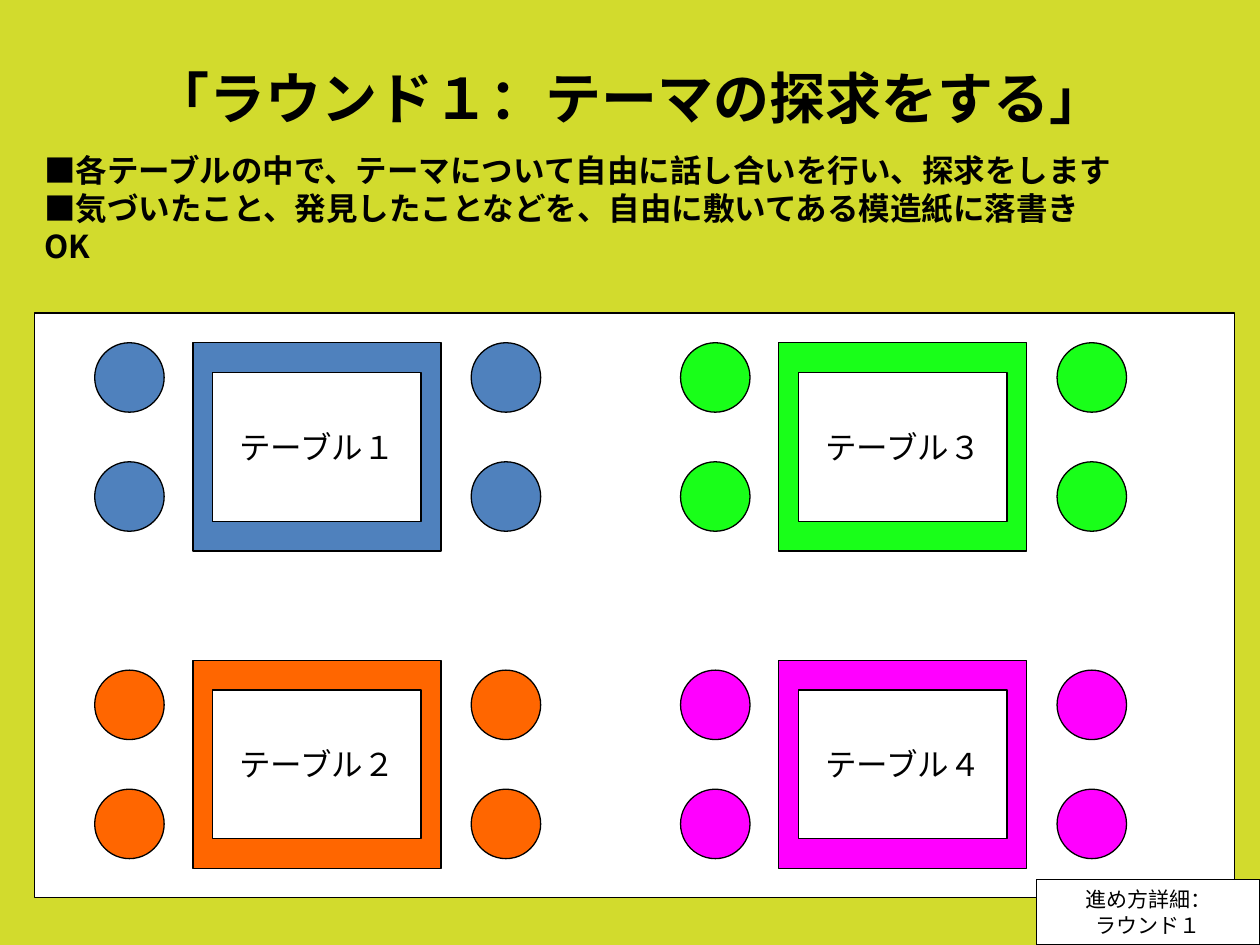
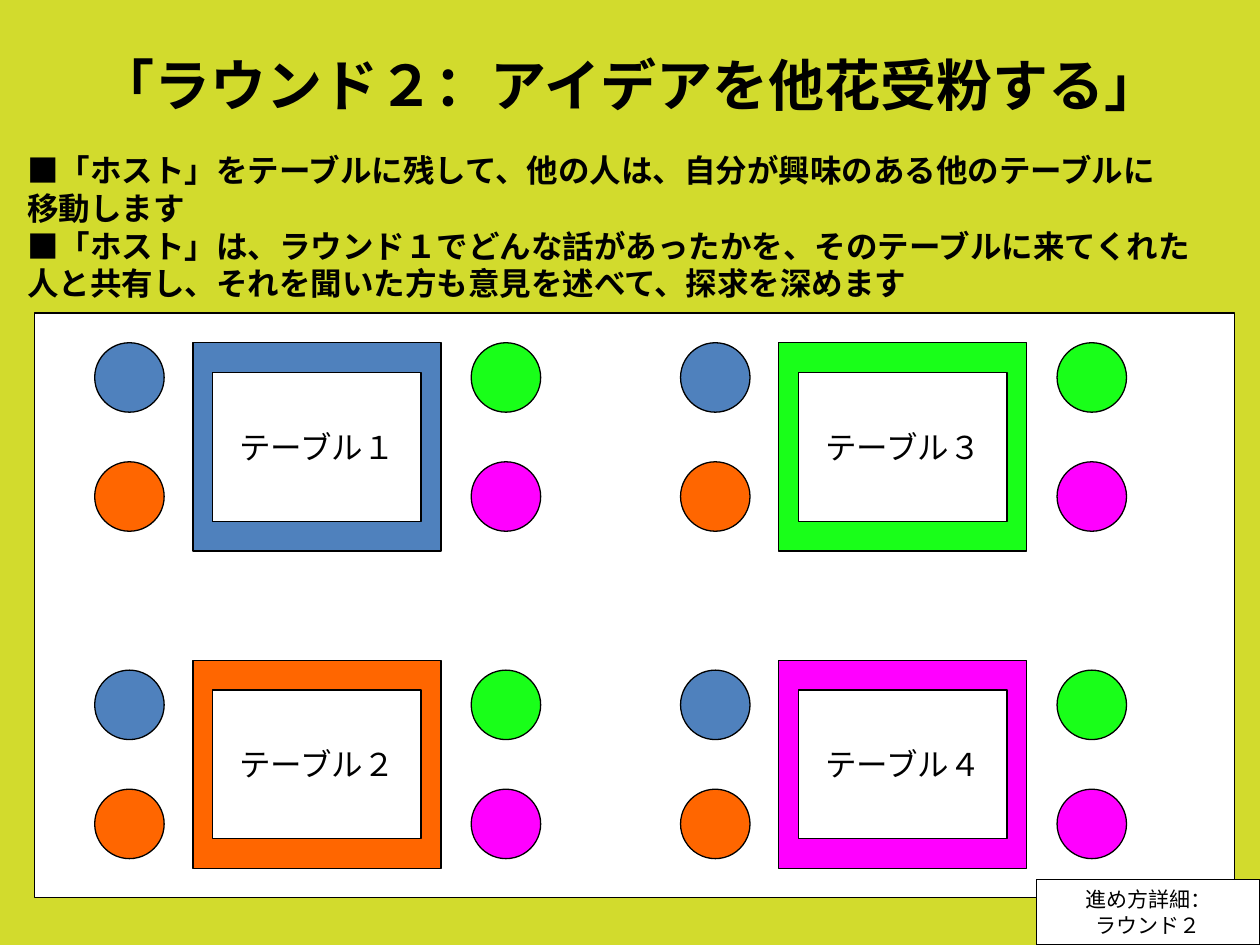
from lxml import etree
from pptx import Presentation
from pptx.dml.color import RGBColor
from pptx.enum.shapes import MSO_SHAPE
from pptx.enum.text import MSO_ANCHOR, PP_ALIGN
from pptx.oxml.ns import qn
from pptx.util import Cm, Pt

RECTANGLE, OVAL = MSO_SHAPE.RECTANGLE, MSO_SHAPE.OVAL
TOP, MIDDLE = MSO_ANCHOR.TOP, MSO_ANCHOR.MIDDLE
LEFT, CENTER = PP_ALIGN.LEFT, PP_ALIGN.CENTER

JAPANESE = "Noto Sans CJK JP"
LIME, WHITE, BLACK, GREEN = "D2DB2D", "FFFFFF", "000000", "00FF00"
TABLE_COLORS = ["4F81BD", "FF6600", GREEN, "FF00FF"]
DIGITS = "１２３４"

TITLE_FORMAT = {"name": JAPANESE, "size": Pt(32), "bold": True}
TABLE_FORMAT = {"name": "Arial", "size": Pt(18)}
FOOTER_FORMAT = {"name": "Arial", "size": Pt(12)}

ROUNDS = [
    {
        "title": "「ラウンド１：テーマの探求をする」",
        "title_inset": 0.92,
        "body": "■各テーブルの中で、テーマについて自由に話し合いを行い、探求をします\v"
                "■気づいたこと、発見したことなどを、自由に敷いてある模造紙に落書きOK",
        "body_area": (0.64, 2.92, 22.25, 1.78),
        "body_font": JAPANESE,
        "mixed": False,
    },
    {
        "title": "「ラウンド２：アイデアを他花受粉する」",
        "title_inset": 1.43,
        "body": "■「ホスト」をテーブルに残して、他の人は、自分が興味のある他のテーブルに\n"
                "移動します\v"
                "■「ホスト」は、ラウンド１でどんな話があったかを、そのテーブルに来てくれた\n"
                "人と共有し、それを聞いた方も意見を述べて、探求を深めます",
        "body_area": (0.3, 2.92, 24.18, 4.06),
        "body_font": "Arial",
        "mixed": True,
    },
]


def write(box, text, font_format, align=CENTER, anchor=MIDDLE, wrap=False):
    frame = box.text_frame
    frame.text = text
    frame.word_wrap = wrap
    frame.vertical_anchor = anchor
    for para in frame.paragraphs:
        para.alignment = align
        for span in para.runs:
            for name, value in font_format.items():
                setattr(span.font, name, value)
            span.font.color.rgb = RGBColor.from_string(BLACK)
            east_asian = etree.SubElement(span.font._element, qn("a:ea"))
            east_asian.set("typeface", JAPANESE)


def add_box(shapes, kind, area, fill):
    box = shapes.add_shape(kind, *map(Cm, area))
    box.shadow.inherit = False
    box.fill.solid()
    box.fill.fore_color.rgb = RGBColor.from_string(fill)
    box.line.color.rgb = RGBColor.from_string(BLACK)
    box.line.width = Pt(0.75)
    if fill == GREEN:
        color = box._element.spPr.find(qn("a:solidFill")).find(qn("a:srgbClr"))
        etree.SubElement(color, qn("a:alpha")).set("val", "90000")
    return box


deck = Presentation()
deck.slide_width, deck.slide_height = Cm(25.4), Cm(19.05)

for digit, content in zip(DIGITS, ROUNDS):
    page = deck.slides.add_slide(deck.slide_layouts[6])
    page.background.fill.solid()
    page.background.fill.fore_color.rgb = RGBColor.from_string(LIME)

    title = page.shapes.add_textbox(Cm(1.27), Cm(0.76), Cm(22.86), Cm(3.18))
    write(title, content["title"], TITLE_FORMAT, wrap=True)
    title.text_frame.margin_bottom = Cm(content["title_inset"])

    add_box(page.shapes, RECTANGLE, (0.69, 6.31, 24.2, 11.79), WHITE)

    for number, table_color in enumerate(TABLE_COLORS):
        column, row = divmod(number, 2)
        left, top = 3.89 + 11.81 * column, 6.91 + 6.4 * row
        add_box(page.shapes, RECTANGLE, (left, top, 5, 4.2), table_color)
        label = add_box(page.shapes, RECTANGLE, (left + 0.4, top + 0.6, 4.2, 3), WHITE)
        write(label, "テーブル" + DIGITS[number], TABLE_FORMAT)

        seats = page.shapes.add_group_shape().shapes if content["mixed"] else page.shapes
        for seat, guest_color in enumerate(TABLE_COLORS):
            side, place = divmod(seat, 2)
            area = (left - 1.98 + 7.59 * side, top + 0.2 * row + 2.4 * place, 1.4, 1.4)
            add_box(seats, OVAL, area, guest_color if content["mixed"] else table_color)

    body = page.shapes.add_textbox(*map(Cm, content["body_area"]))
    body_format = {"name": content["body_font"], "size": Pt(18), "bold": True}
    write(body, content["body"], body_format, LEFT, TOP, wrap=True)
    body.text_frame.margin_right = Cm(0.38)

    footer = add_box(page.shapes, RECTANGLE, (20.9, 17.73, 4.5, 1.32), WHITE)
    write(footer, "進め方詳細：\nラウンド" + digit, FOOTER_FORMAT)

deck.save("out.pptx")
